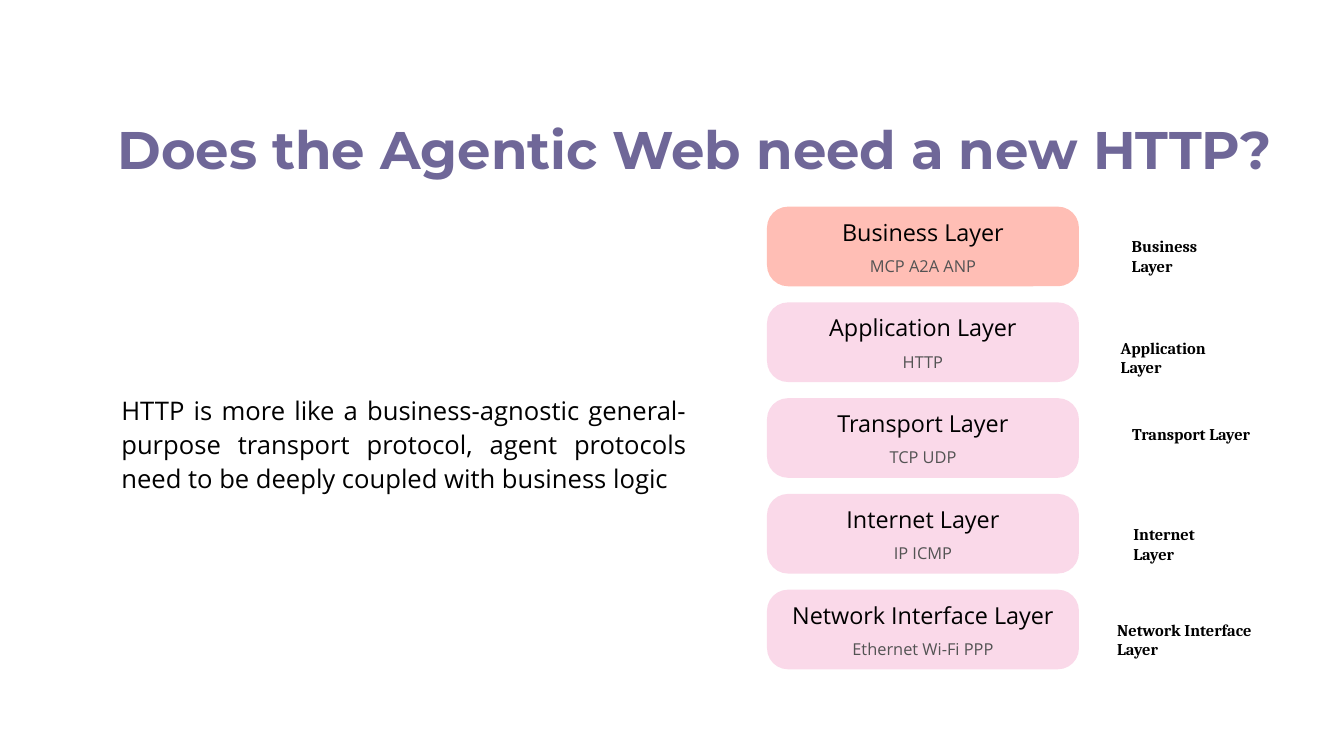
from typing import NamedTuple

from pptx import Presentation
from pptx.dml.color import RGBColor
from pptx.enum.shapes import MSO_SHAPE
from pptx.enum.text import MSO_ANCHOR, MSO_AUTO_SIZE, PP_ALIGN
from pptx.util import Inches, Pt


class Layer(NamedTuple):
    name: str
    protocols: str
    caption_width: float
    label_left: float
    label_top: float
    label_width: float
    fill: str = "FAD9E9"


LAYERS = [
    Layer("Business Layer", "MCP A2A ANP", 2.37, 22.36, 4.59, 2.3, "FFBEB5"),
    Layer("Application Layer", "HTTP", 1.13, 22.14, 6.6, 2.74),
    Layer("Transport Layer", "TCP UDP", 1.62, 22.37, 8.32, 2.54),
    Layer("Internet Layer", "IP ICMP", 1.4, 22.39, 10.3, 2.25),
    Layer("Network Interface Layer", "Ethernet Wi-Fi PPP", 3, 22.07, 12.2, 3.67),
]
STACK_LEFT, STACK_TOP, STACK_PITCH = 15.22, 4.1, 1.9
LAYER_WIDTH, LAYER_HEIGHT = 6.19, 1.58
CAPTION_DROP, LINE_HEIGHT = 0.88, 0.59


def rgb(value: str) -> RGBColor:
    return RGBColor.from_string(value)


def write(shape, text: str, size: float, font: str = "Open Sans",
          color: str = "000000", bold: bool = False, align=PP_ALIGN.LEFT,
          anchor=MSO_ANCHOR.TOP, inset: float = 0.1, wrap: bool = True):
    """Fill a shape with one formatted paragraph and return it."""
    frame = shape.text_frame
    frame.text = text
    frame.word_wrap = wrap
    frame.auto_size = MSO_AUTO_SIZE.NONE
    frame.vertical_anchor = anchor
    frame.margin_left = frame.margin_right = Inches(inset)
    frame.margin_top = frame.margin_bottom = Inches(inset)
    para = frame.paragraphs[0]
    para.alignment = align
    span = para.runs[0].font
    span.name, span.size, span.bold = font, Pt(size), bold
    span.color.rgb = rgb(color)
    return para


def add_box(page, left: float, top: float, width: float, height: float):
    return page.shapes.add_textbox(
        Inches(left), Inches(top), Inches(width), Inches(height))


def add_layer(page, layer: Layer, top: float) -> None:
    # Coloured block with the layer name
    block = page.shapes.add_shape(
        MSO_SHAPE.ROUNDED_RECTANGLE, Inches(STACK_LEFT), Inches(top),
        Inches(LAYER_WIDTH), Inches(LAYER_HEIGHT))
    block.adjustments[0] = 0.264
    block.shadow.inherit = False
    block.fill.solid()
    block.fill.fore_color.rgb = rgb(layer.fill)
    block.line.fill.background()
    write(block, layer.name, 33.4, align=PP_ALIGN.CENTER)

    # Protocols, centred in the block
    left = STACK_LEFT + (LAYER_WIDTH - layer.caption_width) / 2
    caption = add_box(page, left, top + CAPTION_DROP,
                      layer.caption_width, LINE_HEIGHT)
    write(caption, layer.protocols, 23.4, color="535353",
          align=PP_ALIGN.CENTER, wrap=False)

    # Side label
    label = add_box(page, layer.label_left, layer.label_top,
                    layer.label_width, LINE_HEIGHT)
    write(label, layer.name, 23.4, font="Cambria", bold=True)


def main() -> None:
    deck = Presentation()
    deck.slide_width, deck.slide_height = Inches(26.67), Inches(15)
    page = deck.slides.add_slide(deck.slide_layouts[5])

    # Title
    title = page.shapes.title
    title.left, title.top = Inches(2.27), Inches(2.25)
    title.width, title.height = Inches(23.72), Inches(1.84)
    write(title, "Does the Agentic Web need a new HTTP?", 75.6,
          font="Montserrat", color="6F6798", bold=True, inset=0.06)

    # Statement
    statement = add_box(page, 2.31, 5.84, 11.41, 5.88)
    para = write(
        statement,
        "HTTP is more like a business-agnostic general-purpose transport "
        "protocol, agent protocols need to be deeply coupled with business logic",
        36.6, align=PP_ALIGN.JUSTIFY, anchor=MSO_ANCHOR.MIDDLE)
    para.line_spacing = 1.1

    # Protocol stack
    for row, layer in enumerate(LAYERS):
        add_layer(page, layer, STACK_TOP + row * STACK_PITCH)

    deck.save("out.pptx")


if __name__ == "__main__":
    main()
